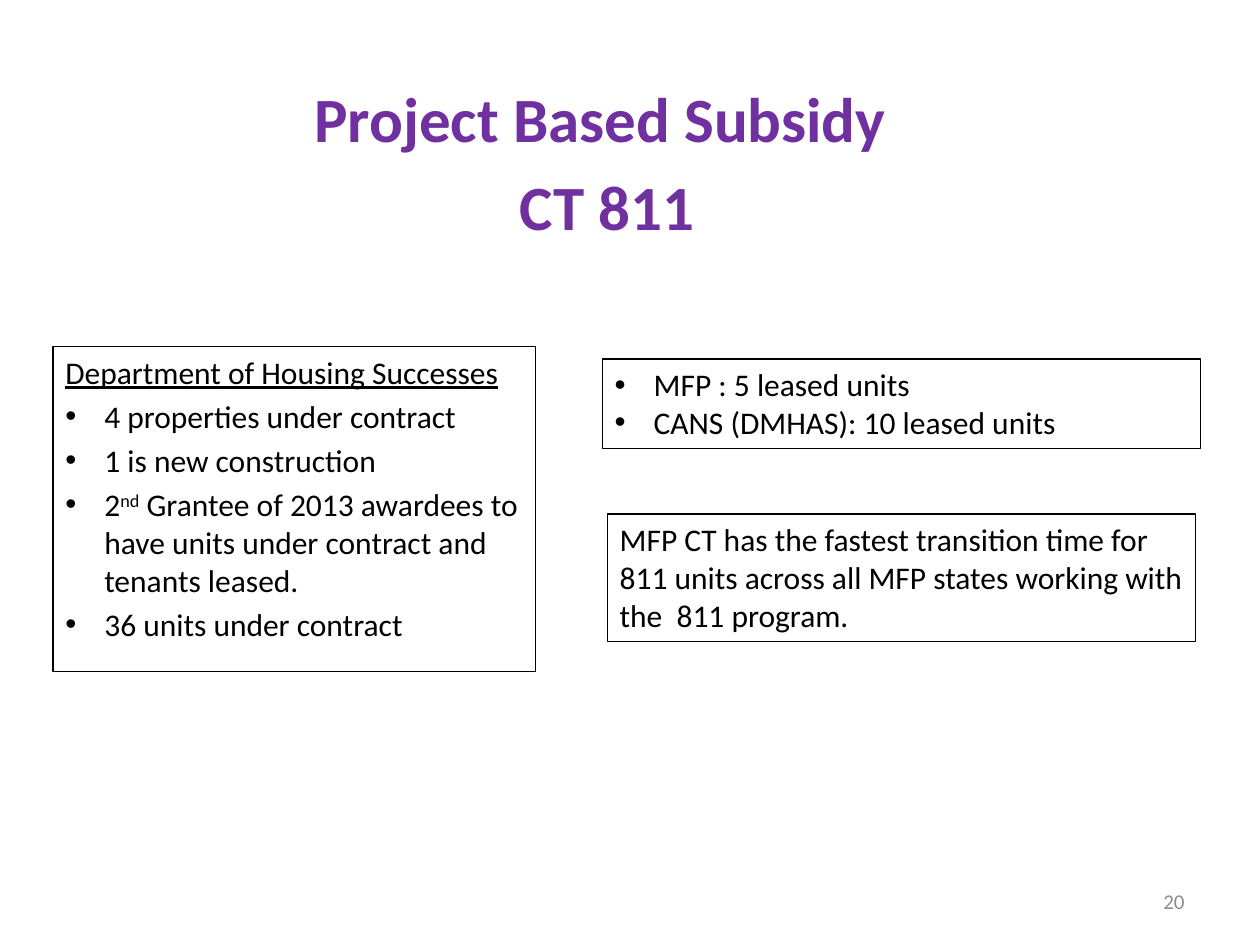
import pptx
import pptx.dml.color
import pptx.enum.shapes
import pptx.enum.text
import pptx.oxml.ns
import pptx.util
from lxml import etree
from pptx.util import Inches

PURPLE = pptx.dml.color.RGBColor(0x70, 0x30, 0xA0)
BLACK = pptx.dml.color.RGBColor(0, 0, 0)
GRAY = pptx.dml.color.RGBColor(0x8C, 0x8C, 0x8C)
ALIGN = pptx.enum.text.PP_ALIGN
ANCHOR = pptx.enum.text.MSO_ANCHOR
FONT = "Calibri"
BODY_SIZE = 18
SPACING = 0.2  # space before a paragraph, as a share of the text size


def format_paragraph(paragraph, size, color, alignment=ALIGN.LEFT, spacing=0, bold=False):
    paragraph.alignment = alignment
    paragraph.space_before = pptx.util.Pt(size * spacing)
    for run in paragraph.runs:
        run.font.name = FONT
        run.font.size = pptx.util.Pt(size)
        run.font.color.rgb = color
        run.font.bold = bold


def add_bullet(paragraph):
    properties = paragraph._p.get_or_add_pPr()
    properties.set("marL", str(Inches(0.31)))
    properties.set("indent", str(-Inches(0.31)))
    for tag, name, value in (("a:buFont", "typeface", "Arial"), ("a:buChar", "char", "•")):
        etree.SubElement(properties, pptx.oxml.ns.qn(tag)).set(name, value)


def add_label(slide, text, left, top, width, height, anchor=ANCHOR.TOP, **style):
    shape = slide.shapes.add_textbox(Inches(left), Inches(top), Inches(width), Inches(height))
    text_frame = shape.text_frame
    text_frame.word_wrap = True
    text_frame.vertical_anchor = anchor
    text_frame.text = text
    for paragraph in text_frame.paragraphs:
        format_paragraph(paragraph, **style)


def add_outlined_box(slide, lines, left, top, width, height, first_bullet=0, spacing=0):
    """Add a framed box whose lines are bulleted from first_bullet on."""
    shape = slide.shapes.add_shape(
        pptx.enum.shapes.MSO_SHAPE.RECTANGLE,
        Inches(left), Inches(top), Inches(width), Inches(height))
    shape.shadow.inherit = False
    shape.fill.background()
    shape.line.color.rgb = BLACK
    shape.line.width = pptx.util.Pt(0.75)
    text_frame = shape.text_frame
    text_frame.word_wrap = True
    text_frame.vertical_anchor = ANCHOR.TOP
    text_frame.text = "\n".join(lines)
    for index, paragraph in enumerate(text_frame.paragraphs):
        format_paragraph(paragraph, BODY_SIZE, BLACK, spacing=spacing)
        if index >= first_bullet:
            add_bullet(paragraph)
    return text_frame


def add_ordinal(paragraph, number, suffix, rest):
    """Write a numeral with a raised suffix, then the rest of the line."""
    paragraph.text = number
    raised = paragraph.add_run()
    raised.text = suffix
    raised.font._element.set("baseline", "30000")
    paragraph.add_run().text = rest
    format_paragraph(paragraph, BODY_SIZE, BLACK, spacing=SPACING)


def main():
    presentation = pptx.Presentation()
    presentation.slide_width = Inches(10)
    presentation.slide_height = Inches(7.5)
    slide = presentation.slides.add_slide(presentation.slide_layouts[6])

    # Title
    add_label(slide, "Project Based Subsidy \nCT 811", 1.94, 0.58, 5.76, 1.17,
              size=36, color=PURPLE, alignment=ALIGN.CENTER, spacing=SPACING, bold=True)

    # Successes, with an underlined heading
    successes = add_outlined_box(
        slide,
        ["Department of Housing Successes", "4 properties under contract",
         "1 is new construction", "2nd", "36 units under contract"],
        0.42, 2.75, 3.83, 2.58, first_bullet=1, spacing=SPACING)
    successes.paragraphs[0].runs[0].font.underline = True
    add_ordinal(successes.paragraphs[3], "2", "nd",
                " Grantee of 2013 awardees to have units under contract and tenants leased.")

    # Leased units
    add_outlined_box(slide, ["MFP : 5 leased units", "CANS (DMHAS): 10 leased units"],
                     4.78, 2.85, 4.75, 0.71)

    # Transition time, without bullets
    add_outlined_box(
        slide,
        ["MFP CT has the fastest transition time for 811 units across all MFP states "
         "working with the  811 program."],
        4.82, 4.08, 4.67, 1.01, first_bullet=1)

    # Page number
    add_label(slide, "20", 7.17, 6.95, 2.33, 0.4, anchor=ANCHOR.MIDDLE,
              size=12, color=GRAY, alignment=ALIGN.RIGHT)

    presentation.save("out.pptx")


if __name__ == "__main__":
    main()
